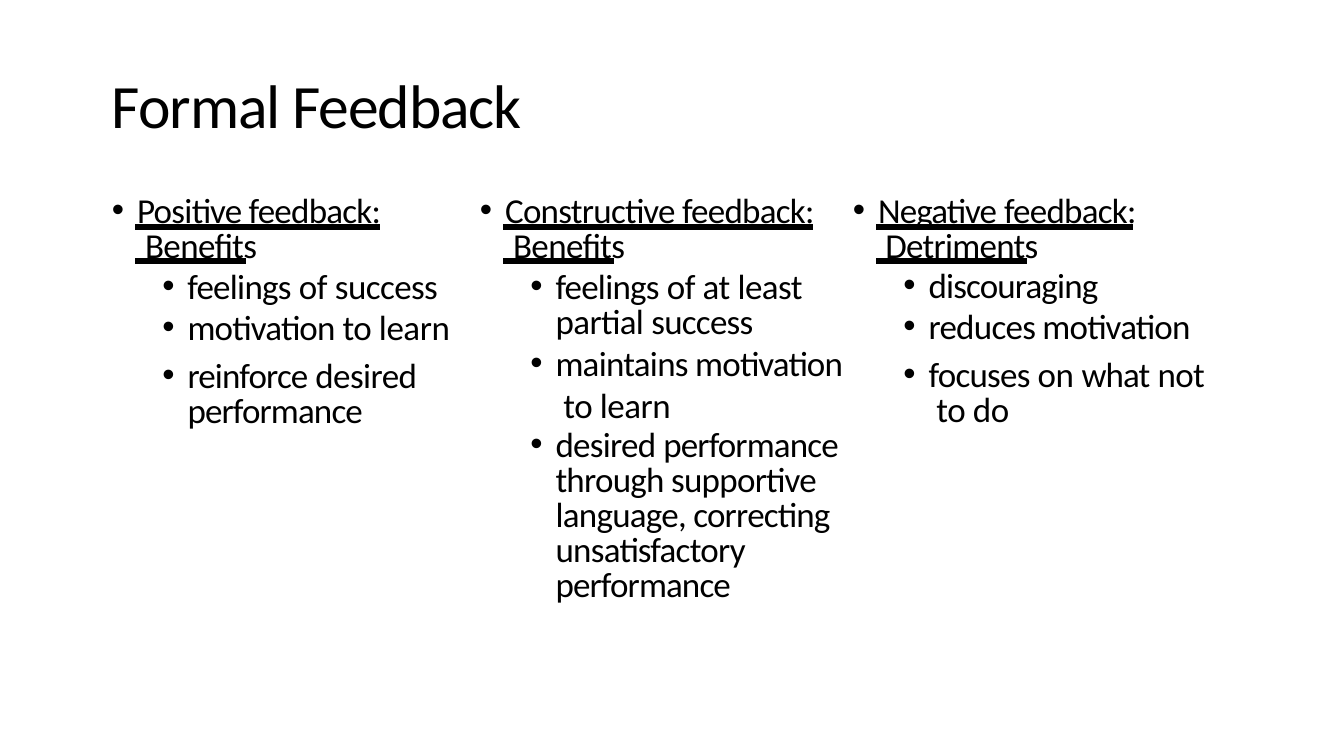
"""Build the Formal Feedback slide with three columns of bullet points."""
from dataclasses import dataclass

from lxml import etree
from pptx import Presentation
from pptx import util as u
from pptx.dml.color import RGBColor
from pptx.enum import shapes, text
from pptx.oxml import ns

BLACK = RGBColor(0x00, 0x00, 0x00)
FONT = "Calibri"
HEADING_TOP = 1.86
RULE_TOPS = (2.25, 2.59)
RULE_INDENT = 0.24
POINTS_INDENT = 0.5


@dataclass(frozen=True)
class Point:
    """A paragraph as (words, letter spacing) pairs, with its spacing in points."""
    words: tuple[tuple[str, float], ...]
    before: float = 0
    leading: float | None = 25


@dataclass(frozen=True)
class Block:
    """A text frame holding points, in inches."""
    top: float
    width: float
    height: float
    inset: float
    points: tuple[Point, ...]


@dataclass(frozen=True)
class Column:
    """A kind of feedback: heading, its two underlines and its points."""
    left: float
    heading_width: float
    heading: Point
    rule_widths: tuple[float, float]
    blocks: tuple[Block, ...]


COLUMNS = (
    Column(1.1, 2.72, Point((("Positive feedback:  ", -0.5), ("Benefits", -0.4)), 6),
           (2.43, 1.1), (
        Block(2.61, 2.77, 0.44, 0.01, (
            Point((("feelings ", -0.5), ("of ", -0.3), ("success", -0.4)), 1, None),)),
        Block(2.96, 2.88, 1.32, 0.07, (
            Point((("motivation ", -0.5), ("to learn", -0.3)), 5, None),
            Point((("reinforce ", -0.6), ("desired  ", -0.4), ("performance", -0.6)), 9))),
    )),
    Column(4.75, 3.38, Point((("Constructive feedback:  ", -0.5), ("Benefits", -0.4)), 6),
           (3.07, 1.1), (
        Block(2.61, 3.15, 3.4, 0.08, (
            Point((("feelings ", -0.5), ("of at ", -0.3), ("least  partial ", -0.4),
                   ("success", -0.5)), 6),
            Point((("maintains motivation  ", -0.5), ("to learn", -0.3)), 0, 30),
            Point((("desired ", -0.5), ("performance  ", -0.6),
                   ("through supportive  language, correcting  unsatisfactory  ", -0.5),
                   ("performance", -0.6)), 3))),
    )),
    Column(8.45, 2.87, Point((("Negative ", -0.6), ("feedback:  Detriments", -0.5)), 6),
           (2.55, 1.5), (
        Block(2.61, 3.01, 1.67, 0.01, (
            Point((("discouraging", -0.6),), 1, 29.5),
            Point((("reduces motivation", -0.5),), 0, 29.5),
            Point((("focuses ", -0.5), ("on ", -0.3), ("what ", -0.6), ("not  ", -0.4),
                   ("to do", -0.3)), 9))),
    )),
)


def add_bullet(paragraph) -> None:
    """Give a paragraph a hanging round bullet."""
    props = paragraph._p.get_or_add_pPr()
    props.set("marL", str(u.Inches(0.26)))
    props.set("indent", str(u.Inches(-0.25)))
    etree.SubElement(props, ns.qn("a:buFont")).set("typeface", "Arial")
    etree.SubElement(props, ns.qn("a:buChar")).set("char", "•")
    tabs = etree.SubElement(props, ns.qn("a:tabLst"))
    tab = etree.SubElement(tabs, ns.qn("a:tab"))
    tab.set("pos", str(u.Inches(0.26)))
    tab.set("algn", "l")


def add_words(paragraph, words: str, *, size: float, spacing: float) -> None:
    """Append one formatted run to a paragraph."""
    run = paragraph.add_run()
    run.text = words
    run.font.name = FONT
    run.font.size = u.Pt(size)
    run.font.color.rgb = BLACK
    run._r.get_or_add_rPr().set("spc", str(round(spacing * 100)))


def add_text(slide, left: float, block: Block, *, size: float = 25, bullets: bool = True,
             anchor: text.MSO_ANCHOR = text.MSO_ANCHOR.TOP) -> None:
    """Draw a block of points."""
    box = slide.shapes.add_textbox(u.Inches(left), u.Inches(block.top),
                                   u.Inches(block.width), u.Inches(block.height))
    frame = box.text_frame
    frame.word_wrap = True
    frame.auto_size = text.MSO_AUTO_SIZE.SHAPE_TO_FIT_TEXT
    frame.vertical_anchor = anchor
    frame.margin_left = frame.margin_right = frame.margin_bottom = 0
    frame.margin_top = u.Inches(block.inset)
    for index, point in enumerate(block.points):
        paragraph = frame.add_paragraph() if index else frame.paragraphs[0]
        paragraph.space_before = u.Pt(point.before)
        if point.leading:
            paragraph.line_spacing = u.Pt(point.leading)
        if bullets:
            add_bullet(paragraph)
        for words, spacing in point.words:
            add_words(paragraph, words, size=size, spacing=spacing)


def add_rule(slide, left: float, top: float, width: float) -> None:
    """Draw a heavy underline."""
    rule = slide.shapes.add_connector(shapes.MSO_CONNECTOR.STRAIGHT, u.Inches(left),
                                      u.Inches(top), u.Inches(left + width), u.Inches(top))
    rule.line.color.rgb = BLACK
    rule.line.width = u.Pt(4.17)
    etree.SubElement(rule._element.spPr, ns.qn("a:effectLst"))


def add_column(slide, column: Column) -> None:
    """Draw a heading with its underlines and points."""
    for top, width in zip(RULE_TOPS, column.rule_widths):
        add_rule(slide, column.left + RULE_INDENT, top, width)
    heading = Block(HEADING_TOP, column.heading_width, 0.79, 0.08, (column.heading,))
    add_text(slide, column.left, heading)
    for block in column.blocks:
        add_text(slide, column.left + POINTS_INDENT, block)


def main() -> None:
    """Build and save the slide."""
    deck = Presentation()
    deck.slide_width, deck.slide_height = u.Inches(13.33), u.Inches(7.5)
    slide = deck.slides.add_slide(deck.slide_layouts[6])
    title = Point((("Formal Feedback", -0.8),), 1.3, None)
    add_text(slide, 1.11, Block(0.63, 4.34, 0.79, 0.02, (title,)), size=44, bullets=False,
             anchor=text.MSO_ANCHOR.MIDDLE)
    for column in COLUMNS:
        add_column(slide, column)
    deck.save("out.pptx")


if __name__ == "__main__":
    main()
